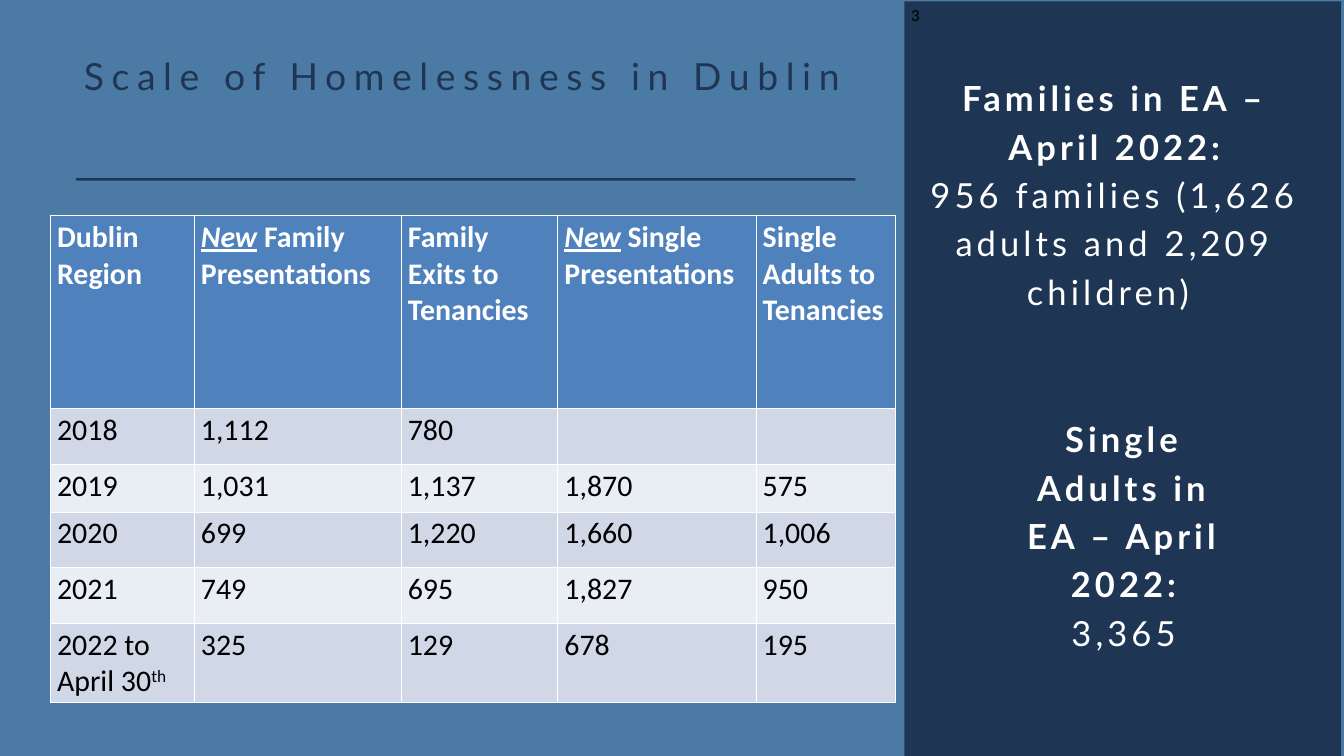
from pptx import Presentation
from pptx.dml.color import RGBColor
from pptx.enum.shapes import MSO_SHAPE
from pptx.enum.text import MSO_ANCHOR, PP_ALIGN
from pptx.util import Inches, Pt

# Grid: 20 columns by 11.25 rows of square cells
COLS, ROWS = 20, 11.25
CELL = Inches(1)

BLUE, NAVY, WHITE, BLACK = "4B7BA5", "1E3653", "FFFFFF", "000000"
HEAD, BANDS = "4F81BD", ("D0D8E8", "E9EDF4")

COL_WIDTHS = [2.14, 3.08, 2.33, 2.95, 2.08]
ROW_HEIGHTS = [2.87, 0.83, 0.71, 0.83, 0.83, 1.01]
# A cell is a list of (text, style) runs or a plain string
TABLE = [
    ["Dublin Region",
     [("New", "mark"), (" Family Presentations", "")],
     "Family Exits to Tenancies",
     [("New", "mark"), (" Single Presentations", "")],
     "Single Adults to Tenancies"],
    ["2018", "1,112", "780", "", ""],
    ["2019", "1,031", "1,137", "1,870", "575"],
    ["2020", "699", "1,220", "1,660", "1,006"],
    ["2021", "749", "695", "1,827", "950"],
    [[("2022 to April 30", ""), ("th", "super")], "325", "129", "678", "195"],
]


def color(value):
    return RGBColor.from_string(value)


def grid(*cells):
    return [round(n * CELL) for n in cells]


def inside(box, x, y, w, h):
    return box[0] + x, box[1] + y, w, h


def set_font(font, name, size, fill, bold=False):
    font.name, font.size, font.bold = name, Pt(size), bold
    font.color.rgb = color(fill)


def add_block(shapes, box, fill):
    s = shapes.add_shape(MSO_SHAPE.RECTANGLE, *grid(*box))
    s.shadow.inherit = False
    s.fill.solid()
    s.fill.fore_color.rgb = color(fill)
    s.line.fill.background()
    return s


def add_spaced_text(shapes, box, lines, size, fill, pitch, spacing):
    """Centred, letter-spaced text; lines are (text, bold) pairs."""
    tf = shapes.add_textbox(*grid(*box)).text_frame
    tf.word_wrap = True
    tf.margin_left = tf.margin_top = tf.margin_right = tf.margin_bottom = 0
    for i, (text, bold) in enumerate(lines):
        p = tf.paragraphs[0] if i == 0 else tf.add_paragraph()
        p.alignment, p.line_spacing = PP_ALIGN.CENTER, Pt(pitch)
        r = p.add_run()
        r.text = text
        set_font(r.font, "Lato", size, fill, bold)
        r.font._element.set("spc", str(round(spacing * 100)))


def add_heading(slide, box):
    shapes = slide.shapes.add_group_shape().shapes
    # Rule under the title
    add_block(shapes, inside(box, 0.05, 2.65, box[2], 0.04), NAVY)
    add_spaced_text(shapes, box, [("Scale of Homelessness in Dublin", False)],
                    40, NAVY, 105, 8.2)


def add_side_panel(slide, box):
    # Panel with the slide number in its corner
    tf = add_block(slide.shapes, box, NAVY).text_frame
    tf.vertical_anchor = MSO_ANCHOR.TOP
    p = tf.paragraphs[0]
    p.text, p.alignment = "3", PP_ALIGN.LEFT
    set_font(p.font, "Calibri", 18, BLACK)
    # Key figures
    figures = [
        ((0.29, 1.03, 5.67, 5.1), "Families in EA – April 2022:",
         "956 families (1,626 adults and 2,209 children) "),
        ((1.62, 6.1, 3.28, 4.38), "Single Adults in EA – April 2022:", "3,365"),
    ]
    for place, label, value in figures:
        add_spaced_text(slide.shapes, inside(box, *place),
                        [(label, True), (value, False)], 37, WHITE, 51.8, 4.4)


def fill_cell(cell, content, fill, ink, bold):
    cell.fill.solid()
    cell.fill.fore_color.rgb = color(fill)
    p = cell.text_frame.paragraphs[0]
    set_font(p.font, "Calibri", 32, ink, bold)
    runs = [(content, "")] if isinstance(content, str) else content
    for text, style in runs:
        if not text:
            continue
        r = p.add_run()
        r.text = text
        if style == "mark":
            r.font.italic = r.font.underline = True
        elif style == "super":
            r.font._element.set("baseline", "30000")


def add_figures_table(slide, box):
    table = slide.shapes.add_table(len(TABLE), len(COL_WIDTHS), *grid(*box)).table
    for column, width in zip(table.columns, grid(*COL_WIDTHS)):
        column.width = width
    for row, height in zip(table.rows, grid(*ROW_HEIGHTS)):
        row.height = height
    for i, values in enumerate(TABLE):
        header = i == 0
        fill = HEAD if header else BANDS[(i - 1) % 2]
        for j, content in enumerate(values):
            fill_cell(table.cell(i, j), content, fill,
                      WHITE if header else BLACK, header)


def main():
    prs = Presentation()
    prs.slide_width, prs.slide_height = grid(COLS, ROWS)
    slide = prs.slides.add_slide(prs.slide_layouts[6])
    slide.background.fill.solid()
    slide.background.fill.fore_color.rgb = color(BLUE)

    add_side_panel(slide, (13.46, 0.02, 6.5, 11.35))
    add_heading(slide, (1.08, 0, 11.6, 2.7))
    add_figures_table(slide, (0.75, 3.21, sum(COL_WIDTHS), sum(ROW_HEIGHTS)))
    prs.save("out.pptx")


if __name__ == "__main__":
    main()
